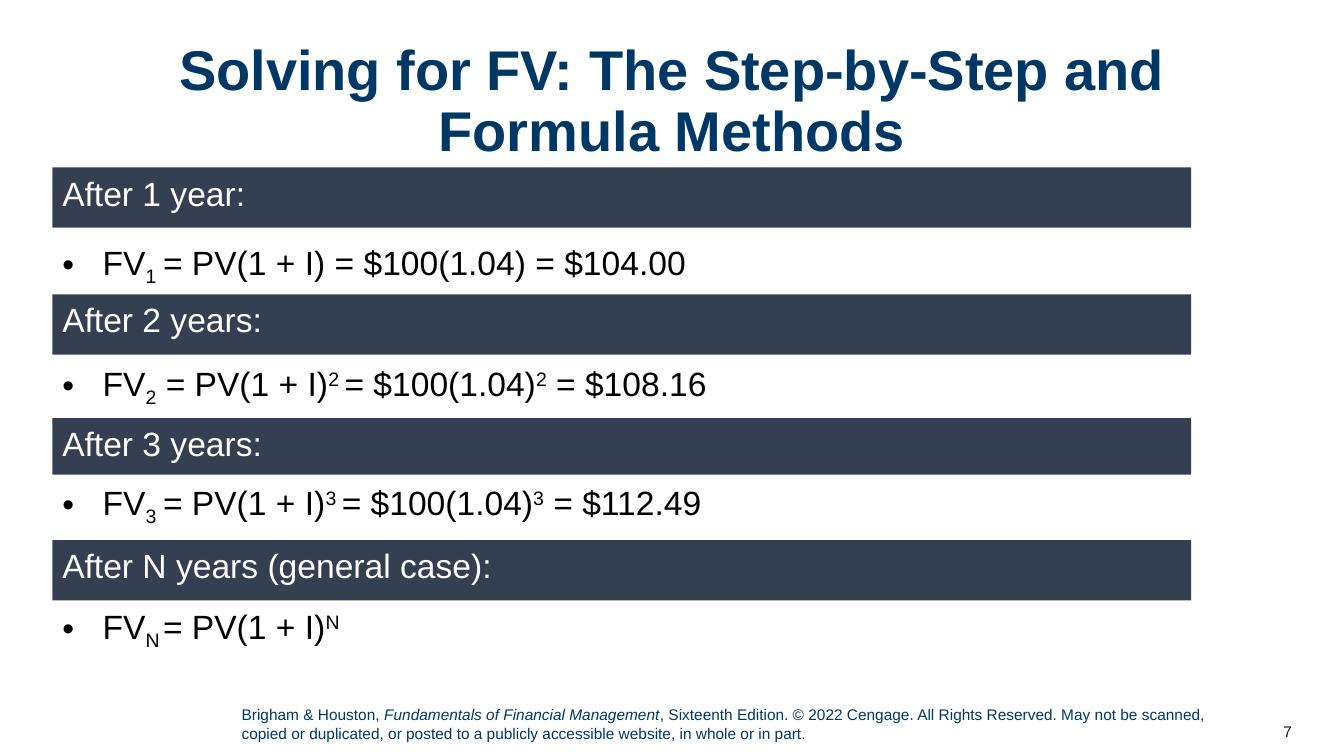
"""Build a slide on solving for future value step by step and by formula."""
from dataclasses import dataclass

from lxml.etree import SubElement
from pptx import Presentation
from pptx.dml.color import RGBColor
from pptx.enum.shapes import MSO_SHAPE
from pptx.enum.text import MSO_ANCHOR, PP_ALIGN
from pptx.oxml.ns import qn
from pptx.util import Cm, Pt

TITLE = "Solving for FV: The Step-by-Step and Formula Methods"
NUMBER = "7"
CREDIT = [
    ("Brigham & Houston, ", False),
    ("Fundamentals of Financial Management", True),
    (", Sixteenth Edition. © 2022 Cengage. All Rights Reserved. May not be scanned, "
     "copied or duplicated, or posted to a publicly accessible website, "
     "in whole or in part.", False),
]
SUB, BASE, SUP = -25, 0, 30
STEPS = [
    ("After 1 year:", 4.22, 1.52, 5.97,
     [("FV", BASE), ("1", SUB), ("\t= PV(1 + I) = $100(1.04) = $104.00", BASE)]),
    ("After 2 years:", 7.42, 1.52, 9.02,
     [("FV", BASE), ("2", SUB), (" = PV(1 + I)", BASE), ("2 ", SUP),
      ("= $100(1.04)", BASE), ("2", SUP), (" = $108.16", BASE)]),
    ("After 3 years:", 10.54, 1.42, 12.01,
     [("FV", BASE), ("3", SUB), ("\t= PV(1 + I)", BASE), ("3 ", SUP),
      ("= $100(1.04)", BASE), ("3", SUP), (" = $112.49", BASE)]),
    ("After N years (general case):", 13.61, 1.52, 15.14,
     [("FV", BASE), ("N", SUB), ("\t= PV(1 + I)", BASE), ("N", SUP)]),
]
LEFT, WIDE, TALL = 1.32, 28.7, 1.52


@dataclass(frozen=True)
class Theme:
    """Hold the colours and type sizes."""
    font: str = "Arial"
    navy: RGBColor = RGBColor(0x00, 0x38, 0x65)
    slate: RGBColor = RGBColor(0x34, 0x3F, 0x52)
    white: RGBColor = RGBColor(0xFF, 0xFF, 0xFF)
    black: RGBColor = RGBColor(0x00, 0x00, 0x00)
    ink: RGBColor = RGBColor(0x18, 0x17, 0x17)
    head: int = 40
    body: int = 24
    foot: int = 11


THEME = Theme()


def style(run, size, color):
    """Set the font of a run."""
    run.font.name = THEME.font
    run.font.size = Pt(size)
    run.font.color.rgb = color


def add_box(slide, left, top, width, height):
    """Add a wrapping text box and return its frame."""
    box = slide.shapes.add_textbox(Cm(left), Cm(top), Cm(width), Cm(height))
    box.text_frame.word_wrap = True
    return box.text_frame


def add_line(slide, place, text, size, color, align):
    """Add a centred-height box with one styled run."""
    frame = add_box(slide, *place)
    frame.text = text
    frame.vertical_anchor = MSO_ANCHOR.MIDDLE
    para = frame.paragraphs[0]
    para.alignment = align
    style(para.runs[0], size, color)
    return para


def add_bar(slide, text, top, height):
    """Add a dark heading bar."""
    bar = slide.shapes.add_shape(
        MSO_SHAPE.RECTANGLE, Cm(LEFT), Cm(top), Cm(WIDE), Cm(height))
    bar.shadow.inherit = False
    bar.fill.solid()
    bar.fill.fore_color.rgb = THEME.slate
    bar.line.fill.background()
    frame = bar.text_frame
    frame.text = text
    frame.vertical_anchor = MSO_ANCHOR.TOP
    para = frame.paragraphs[0]
    para.alignment = PP_ALIGN.LEFT
    style(para.runs[0], THEME.body, THEME.white)


def add_bullet(para):
    """Give a paragraph a hanging round bullet."""
    props = para._p.get_or_add_pPr()
    props.set("marL", str(Cm(1.02)))
    props.set("indent", str(-Cm(1.02)))
    SubElement(props, qn("a:buFont"), typeface=THEME.font)
    SubElement(props, qn("a:buChar"), char="•")


def add_sum(slide, parts, top):
    """Add one bulleted formula."""
    para = add_box(slide, LEFT, top, WIDE, TALL).paragraphs[0]
    add_bullet(para)
    for text, shift in parts:
        run = para.add_run()
        run.text = text
        style(run, THEME.body, THEME.black)
        if shift:
            run.font._element.set("baseline", str(shift * 1000))


def add_credit(slide):
    """Add the copyright line."""
    para = add_box(slide, 5.84, 17.65, 24.89, 1.19).paragraphs[0]
    for text, slant in CREDIT:
        run = para.add_run()
        run.text = text
        style(run, THEME.foot, THEME.navy)
        run.font.italic = slant


def main():
    """Build and save the deck."""
    deck = Presentation()
    deck.slide_width, deck.slide_height = Cm(33.87), Cm(19.05)
    slide = deck.slides.add_slide(deck.slide_layouts[6])
    title = add_line(slide, (LEFT, 1.32, 31.22, 2.54), TITLE,
                     THEME.head, THEME.navy, PP_ALIGN.CENTER)
    title.line_spacing = 0.9
    title.runs[0].font.bold = True
    for name, top, height, below, parts in STEPS:
        add_bar(slide, name, top, height)
        add_sum(slide, parts, below)
    add_credit(slide)
    add_line(slide, (30.78, 17.91, 2.03, 1.02), NUMBER,
             THEME.foot, THEME.ink, PP_ALIGN.RIGHT)
    deck.save("out.pptx")


if __name__ == "__main__":
    main()
